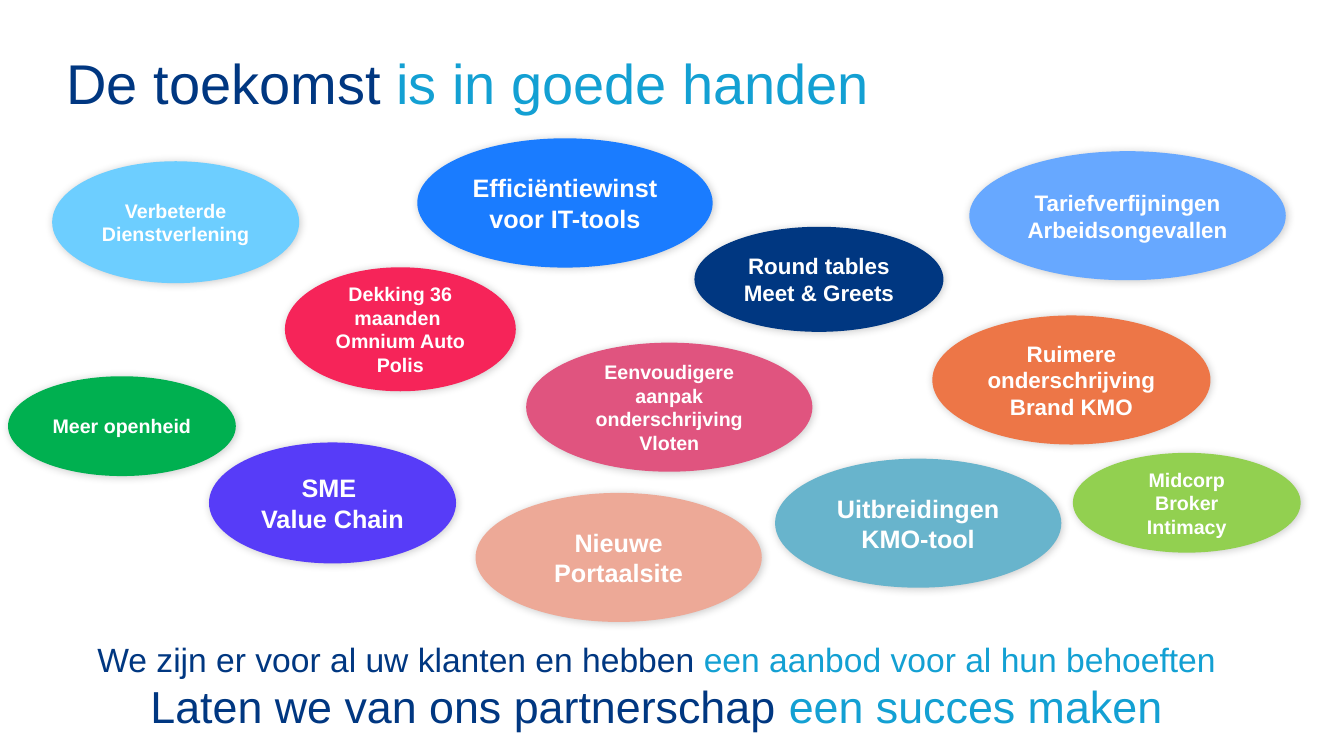
import pptx
import pptx.util
import pptx.dml.color
import pptx.enum.shapes
import pptx.enum.text
import pptx.oxml
import pptx.oxml.ns

WIDE, HIGH = pptx.util.Inches(13.333), pptx.util.Inches(7.5)
FONT = "Arial"
ALIGN = pptx.enum.text.PP_ALIGN
ANCHOR = pptx.enum.text.MSO_ANCHOR
HUES = {
    "navy": "003781", "cyan": "13A0D3", "white": "FFFFFF",
    "sky": "6DCEFF", "blue": "1A7CFF", "pale": "67A8FF",
    "red": "F62459", "pink": "E0547F", "orange": "ED7647",
    "violet": "573CF8", "salmon": "EDA997", "teal": "68B4CC",
    "green": "00B050", "lime": "92D050",
}
# Text, fill, point size, then left, top, width, height in percent of the slide
BUBBLES = [
    ("Verbeterde Dienstverlening", "sky", 14, (3.88, 21.33, 18.38, 16.13)),
    ("Efficiëntiewinst voor IT-tools", "blue", 18, (31.05, 18.3, 21.98, 17.1)),
    ("Tariefverfijningen Arbeidsongevallen", "pale", 16, (72.12, 20, 23.55, 17.07)),
    ("Dekking 36 maanden \vOmnium Auto Polis", "red", 14, (21.2, 35.36, 17.18, 16.4)),
    ("Eenvoudigere aanpak onderschrijving Vloten", "pink", 14, (39.15, 45.33, 21.3, 17.07)),
    ("Ruimere onderschrijving Brand KMO", "orange", 16, (69.37, 41.73, 20.7, 17.07)),
    ("SME \vValue Chain", "violet", 18, (15.55, 58.53, 18.38, 16)),
    ("Nieuwe Portaalsite", "salmon", 18, (35.38, 65.2, 21.3, 17.07)),
    ("Uitbreidingen KMO-tool", "teal", 18, (57.67, 60.67, 21.3, 17.07)),
    ("Round tables\nMeet & Greets", "navy", 16, (51.67, 30, 18.53, 13.9)),
    ("Meer openheid", "green", 14, (0.6, 49.77, 16.95, 13.2)),
    ("Midcorp\nBroker Intimacy", "lime", 14, (79.83, 59.9, 16.95, 13.2)),
]
CLOSING = [
    ("We zijn er voor al uw klanten en hebben ", "een aanbod voor al hun behoeften", 24),
    ("Laten we van ons partnerschap ", "een succes maken", 32),
]


def place(box):
    """Turn percentages of the slide into lengths."""
    return [round(part * full / 100) for part, full in zip(box, (WIDE, HIGH) * 2)]


def color(hue):
    return pptx.dml.color.RGBColor.from_string(HUES[hue])


def style(font, size, hue, bold=False):
    font.name, font.size, font.bold = FONT, pptx.util.Pt(size), bold
    font.color.rgb = color(hue)


def trim(frame):
    """Drop the inner margins and hold the text at the top."""
    frame.margin_left = frame.margin_right = 0
    frame.margin_top = frame.margin_bottom = 0
    frame.vertical_anchor = ANCHOR.TOP
    frame.auto_size = pptx.enum.text.MSO_AUTO_SIZE.NONE


def write_pair(para, lead, rest, size, align):
    """Write one line whose second half is cyan."""
    para.alignment = align
    for text, hue in ((lead, "navy"), (rest, "cyan")):
        run = para.add_run()
        run.text = text
        style(run.font, size, hue)


def cast_shadow(shape):
    shape.shadow.inherit = False
    effects = shape.fill._xPr.find(pptx.oxml.ns.qn("a:effectLst"))
    effects.append(pptx.oxml.parse_xml(
        f'<a:outerShdw {pptx.oxml.ns.nsdecls("a")} blurRad="76200" dist="12700" '
        'dir="2700000" algn="tl" rotWithShape="0"><a:srgbClr val="000000">'
        '<a:alpha val="20000"/></a:srgbClr></a:outerShdw>'))


def add_title(slide):
    title = slide.shapes.title
    title.left, title.top, title.width, title.height = place((4.95, 6.4, 89.9, 10))
    frame = title.text_frame
    trim(frame)
    write_pair(frame.paragraphs[0], "De toekomst ", "is in goede handen", 40, ALIGN.LEFT)


def add_closing(slide):
    frame = slide.shapes.add_textbox(*place((6.9, 84.5, 83.9, 13.3))).text_frame
    trim(frame)
    frame.word_wrap = False
    for row, (lead, rest, size) in enumerate(CLOSING):
        para = frame.add_paragraph() if row else frame.paragraphs[0]
        write_pair(para, lead, rest, size, ALIGN.CENTER)


def add_bubble(slide, text, hue, size, box):
    oval = slide.shapes.add_shape(pptx.enum.shapes.MSO_SHAPE.OVAL, *place(box))
    oval.fill.solid()
    oval.fill.fore_color.rgb = color(hue)
    oval.line.fill.background()
    cast_shadow(oval)
    frame = oval.text_frame
    frame.text = text
    frame.word_wrap = True
    frame.vertical_anchor = ANCHOR.MIDDLE
    for para in frame.paragraphs:
        para.alignment = ALIGN.CENTER
        for run in para.runs:
            style(run.font, size, "white", True)


def main():
    deck = pptx.Presentation()
    deck.slide_width, deck.slide_height = WIDE, HIGH
    slide = deck.slides.add_slide(deck.slide_layouts[5])
    add_title(slide)
    add_closing(slide)
    for bubble in BUBBLES:
        add_bubble(slide, *bubble)
    deck.save("out.pptx")


if __name__ == "__main__":
    main()
